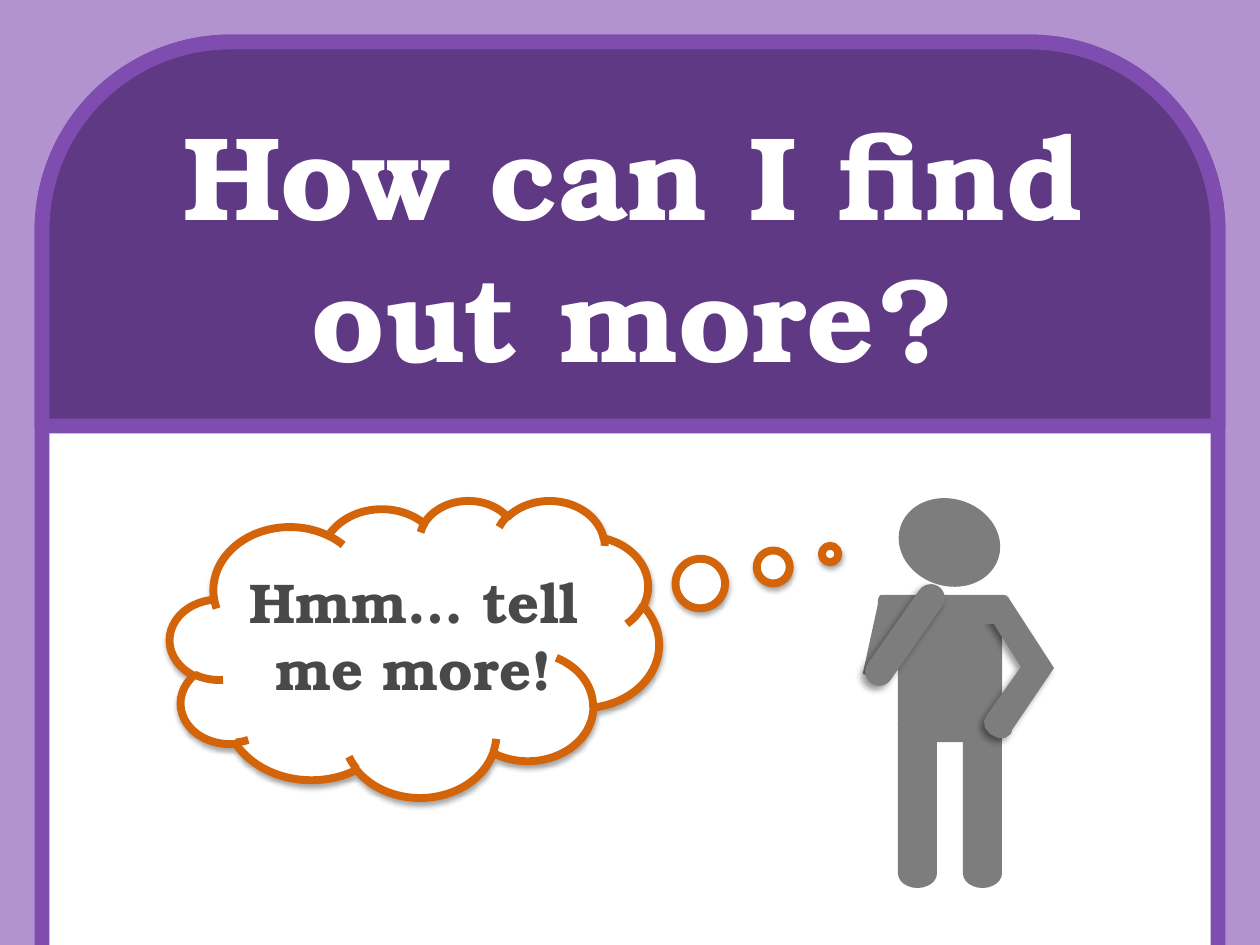
from pptx import Presentation
from pptx.dml.color import RGBColor
from pptx.enum.shapes import MSO_SHAPE
from pptx.enum.text import MSO_AUTO_SIZE, PP_ALIGN
from pptx.oxml import parse_xml
from pptx.oxml.ns import nsdecls
from pptx.util import Emu, Pt

LILAC = RGBColor(0xB2, 0x93, 0xD0)
VIOLET = RGBColor(0x7F, 0x4C, 0xAF)
PURPLE = RGBColor(0x5F, 0x39, 0x83)
WHITE = RGBColor(0xFF, 0xFF, 0xFF)
GREY = RGBColor(0x7D, 0x7D, 0x7D)
ORANGE = RGBColor(0xD3, 0x64, 0x09)
CHARCOAL = RGBColor(0x49, 0x49, 0x49)

RECTANGLE = MSO_SHAPE.RECTANGLE
ROUNDED = MSO_SHAPE.ROUNDED_RECTANGLE
ROUND_TOP = MSO_SHAPE.ROUND_2_SAME_RECTANGLE
OVAL = MSO_SHAPE.OVAL
CLOUD = MSO_SHAPE.CLOUD_CALLOUT
CENTER = PP_ALIGN.CENTER
FIT_SHAPE = MSO_AUTO_SIZE.SHAPE_TO_FIT_TEXT

FONT = "TeX Gyre Bonum"
EMU_PER_PX = 914400 / 126
CLOUD_SHADOW = (35, 3.1, 1.8, 90)
ARM_SHADOW = (40, 4, 3, 135)


def px(length):
    return Emu(round(length * EMU_PER_PX))


class SlideBuilder:
    def __init__(self, deck):
        self.page = deck.slides.add_slide(deck.slide_layouts[6])
        self.shapes = self.page.shapes

    def background(self, color):
        fill = self.page.background.fill
        fill.solid()
        fill.fore_color.rgb = color

    def begin_group(self):
        self.shapes = self.page.shapes.add_group_shape().shapes

    def end_group(self):
        self.shapes = self.page.shapes

    def paint(self, shape, fill, line=None, width=0, shadow=None):
        shape.fill.solid()
        shape.fill.fore_color.rgb = fill
        if line is None:
            shape.line.fill.background()
        else:
            shape.line.color.rgb = line
            shape.line.width = Pt(width)
        shape.shadow.inherit = False
        if shadow:
            self.cast_shadow(shape, *shadow)

    def cast_shadow(self, shape, opacity, blur, distance, angle):
        effects = shape._element.spPr.find(
            "{http://schemas.openxmlformats.org/drawingml/2006/main}effectLst")
        effects.append(parse_xml(
            f'<a:outerShdw {nsdecls("a")} blurRad="{Pt(blur)}" dist="{Pt(distance)}" '
            f'dir="{angle * 60000}" algn="ctr" rotWithShape="0"><a:srgbClr val="000000">'
            f'<a:alpha val="{opacity * 1000}"/></a:srgbClr></a:outerShdw>'))

    def shape(self, kind, box, fill, rotation=0, adjustments=(), **style):
        shape = self.shapes.add_shape(kind, *map(px, box))
        shape.rotation = rotation
        for index, value in enumerate(adjustments):
            shape.adjustments[index] = value
        self.paint(shape, fill, **style)

    def polygon(self, points, fill, **style):
        outline = self.shapes.build_freeform(*points[0], scale=EMU_PER_PX)
        outline.add_line_segments(points[1:], close=True)
        self.paint(outline.convert_to_shape(), fill, **style)

    def text(self, box, words, size, color):
        frame = self.shapes.add_textbox(*map(px, box)).text_frame
        frame.word_wrap = True
        frame.auto_size = FIT_SHAPE
        para = frame.paragraphs[0]
        para.text = words
        para.alignment = CENTER
        para.font.name = FONT
        para.font.size = Pt(size)
        para.font.bold = True
        para.font.color.rgb = color


def draw_frame(builder):
    border = {"line": VIOLET, "width": 8.5}
    builder.background(LILAC)
    builder.shape(ROUNDED, (42, 42, 1176, 1134), WHITE, **border)
    builder.shape(ROUND_TOP, (42, 42, 1176, 384), PURPLE, adjustments=(0.49, 0), **border)
    builder.text((105, 95, 1056, 301), "How can I find out more?", 68, WHITE)


def draw_thinker(builder):
    builder.begin_group()
    builder.shape(OVAL, (898, 499, 103, 87), GREY, rotation=18)
    builder.shape(ROUNDED, (898, 596, 104, 146), GREY)
    for left in (898, 963):
        builder.shape(RECTANGLE, (left, 723, 39, 152), GREY)
        builder.shape(OVAL, (left, 859, 39, 29), GREY)
    builder.shape(RECTANGLE, (871, 597, 28, 81), GREY, rotation=12.3)
    bent_arm = [(1008, 597), (985, 610), (1021, 667), (987, 715), (984, 721),
                (985, 728), (990, 734), (998, 738), (1005, 738), (1011, 734),
                (1012, 730), (1054, 668)]
    builder.polygon(bent_arm, GREY, shadow=ARM_SHADOW)
    builder.shape(ROUNDED, (878, 595, 131, 29), GREY)
    builder.shape(ROUNDED, (891, 576, 28, 118), GREY, rotation=35,
                  adjustments=(0.5,), shadow=ARM_SHADOW)
    builder.end_group()


def draw_thought(builder):
    builder.shape(CLOUD, (170, 500, 489, 297), WHITE, adjustments=(0.85, -0.318),
                  line=ORANGE, width=4.5, shadow=CLOUD_SHADOW)
    builder.text((205, 561, 418, 149), "Hmm… tell me more!", 32, CHARCOAL)


def main():
    deck = Presentation()
    deck.slide_width, deck.slide_height = px(1260), px(945)
    builder = SlideBuilder(deck)
    draw_frame(builder)
    draw_thinker(builder)
    draw_thought(builder)
    deck.save("out.pptx")


if __name__ == "__main__":
    main()
